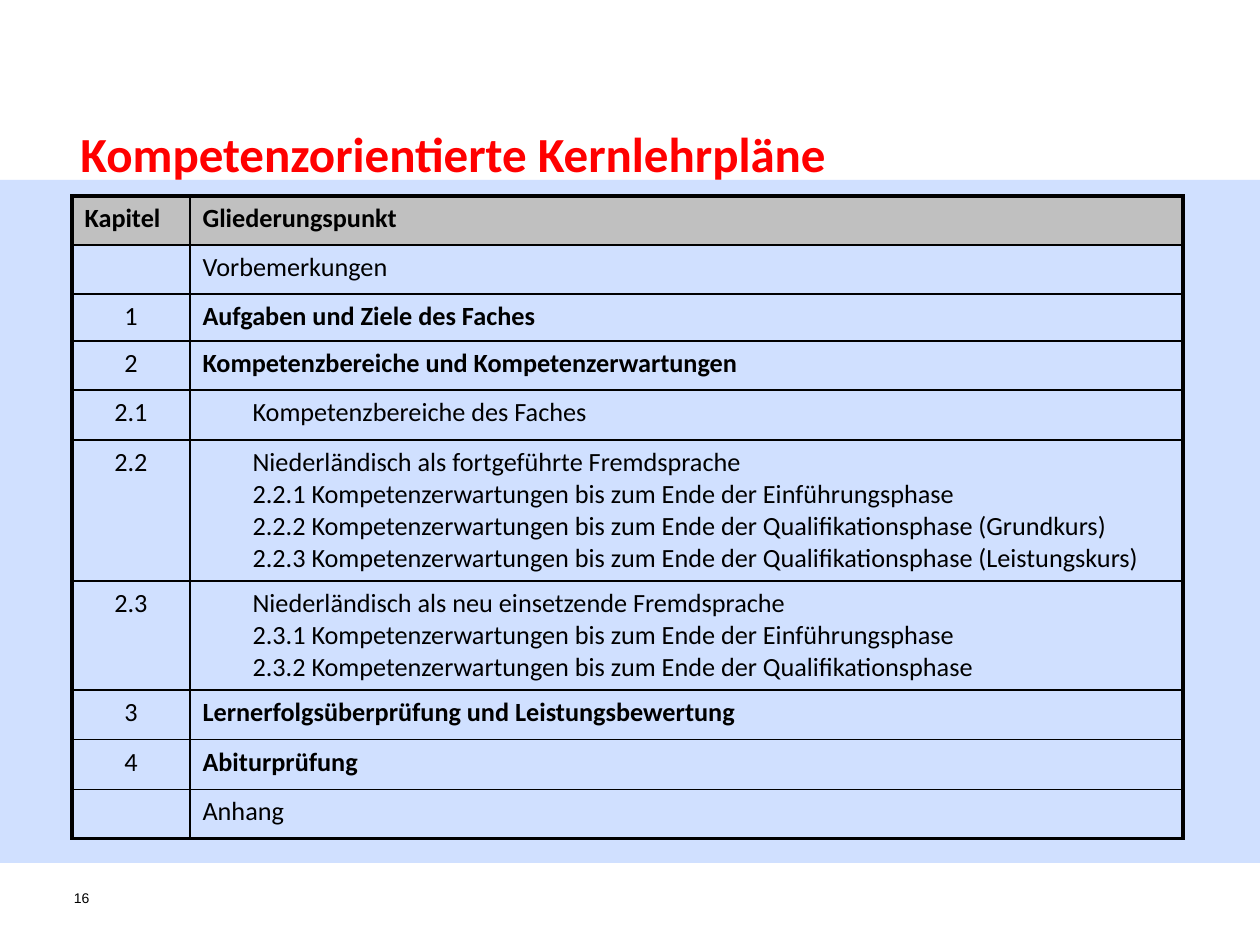
from lxml import etree
from pptx import Presentation, util as u
from pptx.dml.color import RGBColor
from pptx.enum import shapes, text
from pptx.oxml.ns import qn

PX = 914400 / 126
BLACK = RGBColor(0x00, 0x00, 0x00)
RED = RGBColor(0xFF, 0x00, 0x00)
GREY = RGBColor(0xC0, 0xC0, 0xC0)
BLUE = RGBColor(0x66, 0x99, 0xFF)

TITLE = "Kompetenzorientierte Kernlehrpläne"
PAGE = "16"
# chapter, lines, style of the second column, row height in px
ROWS = [
    ("Kapitel", ["Gliederungspunkt"], "head", 49),
    ("", ["Vorbemerkungen"], "plain", 49),
    ("1", ["Aufgaben und Ziele des Faches"], "bold", 47),
    ("2", ["Kompetenzbereiche und Kompetenzerwartungen"], "bold", 49),
    ("2.1", ["Kompetenzbereiche des Faches"], "indent", 50),
    ("2.2", ["Niederländisch als fortgeführte Fremdsprache",
             "2.2.1 Kompetenzerwartungen bis zum Ende der Einführungsphase",
             "2.2.2 Kompetenzerwartungen bis zum Ende der Qualifikationsphase (Grundkurs)",
             "2.2.3 Kompetenzerwartungen bis zum Ende der Qualifikationsphase (Leistungskurs)"],
     "indent", 141),
    ("2.3", ["Niederländisch als neu einsetzende Fremdsprache",
             "2.3.1 Kompetenzerwartungen bis zum Ende der Einführungsphase",
             "2.3.2 Kompetenzerwartungen bis zum Ende der Qualifikationsphase"],
     "indent", 109),
    ("3", ["Lernerfolgsüberprüfung und Leistungsbewertung"], "bold", 50),
    ("4", ["Abiturprüfung"], "bold", 50),
    ("", ["Anhang"], "plain", 49),
]
COLS = (118, 993)
TABLE_AT = (72, 196)
CELL_SIZE = 15
INDENT = 50


def px(n):
    return u.Emu(round(n * PX))


def style(p, font, size, color, bold=False):
    for r in p.runs:
        r.font.name, r.font.size, r.font.bold = font, u.Pt(size), bold
        r.font.color.rgb = color


def add_text(s, box, words, font, size, color, bold=False):
    tf = s.shapes.add_textbox(*map(px, box)).text_frame
    tf.word_wrap = True
    tf.text = words
    style(tf.paragraphs[0], font, size, color, bold)
    return tf


def add_borders(cell, widths):
    """Draw solid borders; widths maps L, R, T, B to points."""
    tc_pr = cell._tc.get_or_add_tcPr()
    for side, width in widths.items():
        ln = etree.SubElement(tc_pr, qn(f"a:ln{side}"), w=str(u.Pt(width)))
        fill = etree.SubElement(ln, qn("a:solidFill"))
        etree.SubElement(fill, qn("a:srgbClr"), val=str(BLACK))


def fill_cell(cell, lines, bold, align, indent):
    cell.text_frame.text = "\n".join(lines)
    for p in cell.text_frame.paragraphs:
        p.alignment = align
        if indent:
            p._p.get_or_add_pPr().set("marL", str(px(INDENT)))
        style(p, "Calibri", CELL_SIZE, BLACK, bold)
        if not p.runs:  # keeps an empty row from growing
            p._p.get_or_add_endParaRPr().set("sz", str(CELL_SIZE * 100))


def add_outline_table(s):
    heights = [row[-1] for row in ROWS]
    box = (*TABLE_AT, sum(COLS), sum(heights))
    table = s.shapes.add_table(len(ROWS), len(COLS), *map(px, box)).table
    table.first_row = table.horz_banding = False
    for col, width in zip(table.columns, COLS):
        col.width = px(width)
    last = len(ROWS) - 1
    for i, (chapter, lines, kind, height) in enumerate(ROWS):
        table.rows[i].height = px(height)
        head = kind == "head"
        left, right = table.cell(i, 0), table.cell(i, 1)
        fill_cell(left, [chapter], head,
                  text.PP_ALIGN.LEFT if head else text.PP_ALIGN.CENTER, False)
        fill_cell(right, lines, kind in ("head", "bold"),
                  text.PP_ALIGN.LEFT, kind == "indent")
        for j, cell in enumerate((left, right)):
            edges = {"L": j == 0, "R": j == 1, "T": i == 0, "B": i == last}
            add_borders(cell, {k: 2.25 if outer else 1 for k, outer in edges.items()})
            if head:
                cell.fill.solid()
                cell.fill.fore_color.rgb = GREY
            else:
                cell.fill.background()


prs = Presentation()
prs.slide_width, prs.slide_height = px(1260), px(945)
s = prs.slides.add_slide(prs.slide_layouts[6])

band = s.shapes.add_shape(shapes.MSO_SHAPE.RECTANGLE, *map(px, (0, 180, 1260, 683)))
band.shadow.inherit = False
band.line.fill.background()
band.fill.solid()
band.fill.fore_color.rgb = BLUE
color = band._element.spPr.find(qn("a:solidFill")).find(qn("a:srgbClr"))
etree.SubElement(color, qn("a:alpha"), val="30000")

tf = add_text(s, (74, 890, 40, 47), PAGE, "Arial", 8, BLACK)
tf.margin_left = tf.margin_top = tf.margin_right = tf.margin_bottom = 0
add_outline_table(s)
add_text(s, (68, 117, 1139, 72), TITLE, "Calibri", 28, RED, True)

prs.save("out.pptx")
